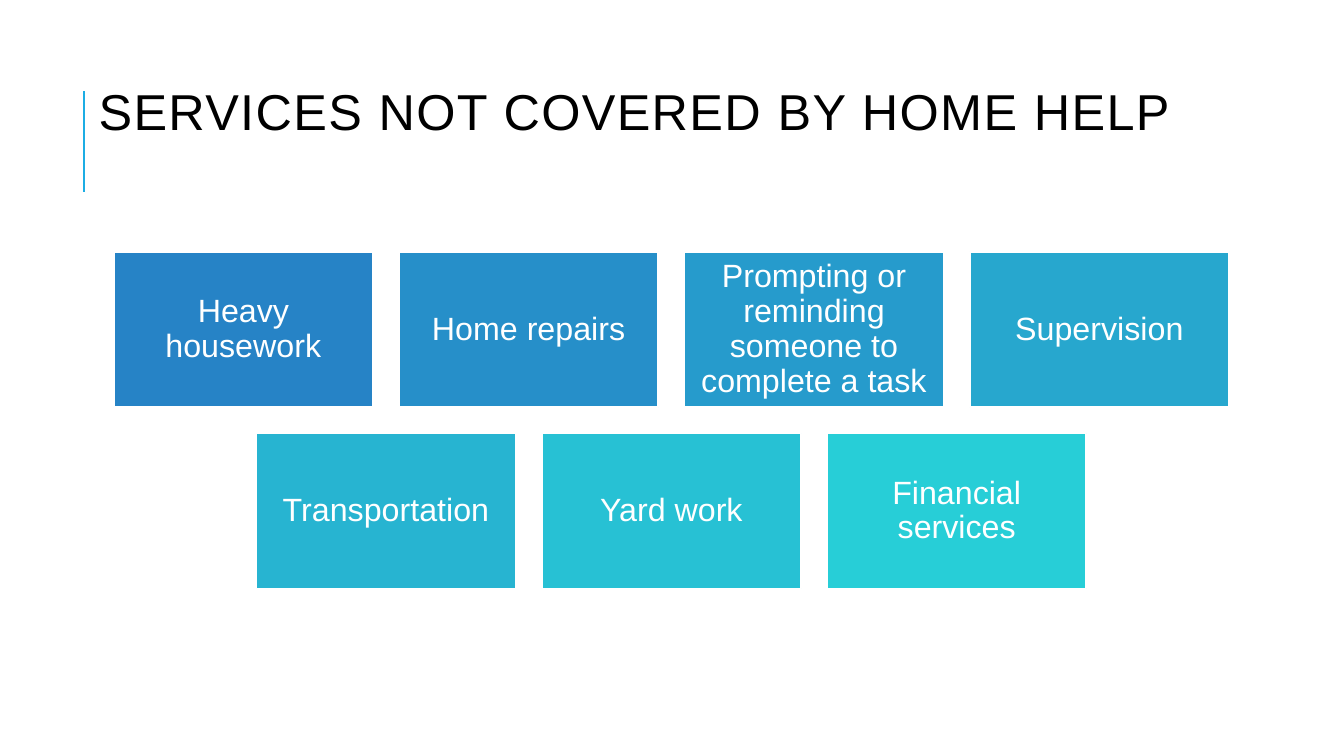
from pptx import Presentation
from pptx.dml.color import RGBColor
from pptx.enum.shapes import MSO_CONNECTOR as Conn, MSO_SHAPE as Shape
from pptx.enum.text import MSO_ANCHOR as Anchor, PP_ALIGN as Align
from pptx.oxml.ns import qn
from pptx.util import Inches, Pt
from lxml.etree import SubElement


def color(code):
    return RGBColor.from_string(code)


def write(frame, text, size, ink, align=Align.LEFT, lead=1.0, track=0, pad=None):
    frame.word_wrap = True
    frame.vertical_anchor = Anchor.MIDDLE
    if pad is not None:
        frame.margin_left = frame.margin_right = Inches(pad)
        frame.margin_top = frame.margin_bottom = Inches(pad)
    para = frame.paragraphs[0]
    para.alignment = align
    para.line_spacing = lead
    run = para.add_run()
    run.text = text
    run.font.name = "Arial"
    run.font.size = Pt(size)
    run.font.color.rgb = color(ink)
    if track:
        run.font._element.set("spc", str(track * 100))


class Deck:
    accent = "1CADE4"
    ink = "000000"
    paper = "FFFFFF"

    def __init__(self, slide):
        self.slide = slide

    def title(self, text, left, top, width, height):
        box = self.slide.shapes.add_textbox(
            Inches(left), Inches(top), Inches(width), Inches(height))
        write(box.text_frame, text, 36, self.ink, lead=0.8, track=1)

    def rule(self, left, top, bottom):
        line = self.slide.shapes.add_connector(
            Conn.STRAIGHT, Inches(left), Inches(bottom), Inches(left), Inches(top))
        line.line.color.rgb = color(self.accent)
        line.line.width = Pt(1.5)
        SubElement(line._element.spPr, qn("a:effectLst"))

    def tile(self, text, fill, left, top, width, height):
        box = self.slide.shapes.add_shape(
            Shape.RECTANGLE, Inches(left), Inches(top), Inches(width), Inches(height))
        box.shadow.inherit = False
        box.fill.solid()
        box.fill.fore_color.rgb = color(fill)
        box.line.color.rgb = color(self.paper)
        box.line.width = Pt(1.25)
        write(box.text_frame, text, 23, self.paper, Align.CENTER, lead=0.9, pad=0.1)


def main():
    show = Presentation()
    show.slide_width, show.slide_height = Inches(13.33), Inches(7.5)
    deck = Deck(show.slides.add_slide(show.slide_layouts[6]))

    # Heading
    deck.rule(0.83, 0.9, 1.9)
    deck.title("SERVICES NOT COVERED BY HOME HELP", 0.88, 0.5, 11.57, 1.3)

    # Service tiles, each row centred
    rows = [
        [("Heavy housework", "2683C6"),
         ("Home repairs", "268FC9"),
         ("Prompting or reminding someone to complete a task", "269BCC"),
         ("Supervision", "27A7CE")],
        [("Transportation", "27B4D1"),
         ("Yard work", "27C1D4"),
         ("Financial services", "27CED7")],
    ]
    width, height, gap = 2.57, 1.54, 0.26
    middle, top = 6.66, 2.5
    for i, row in enumerate(rows):
        start = middle - (len(row) * (width + gap) - gap) / 2
        for j, (text, fill) in enumerate(row):
            deck.tile(text, fill, start + j * (width + gap),
                      top + i * (height + gap), width, height)

    show.save("out.pptx")


if __name__ == "__main__":
    main()
